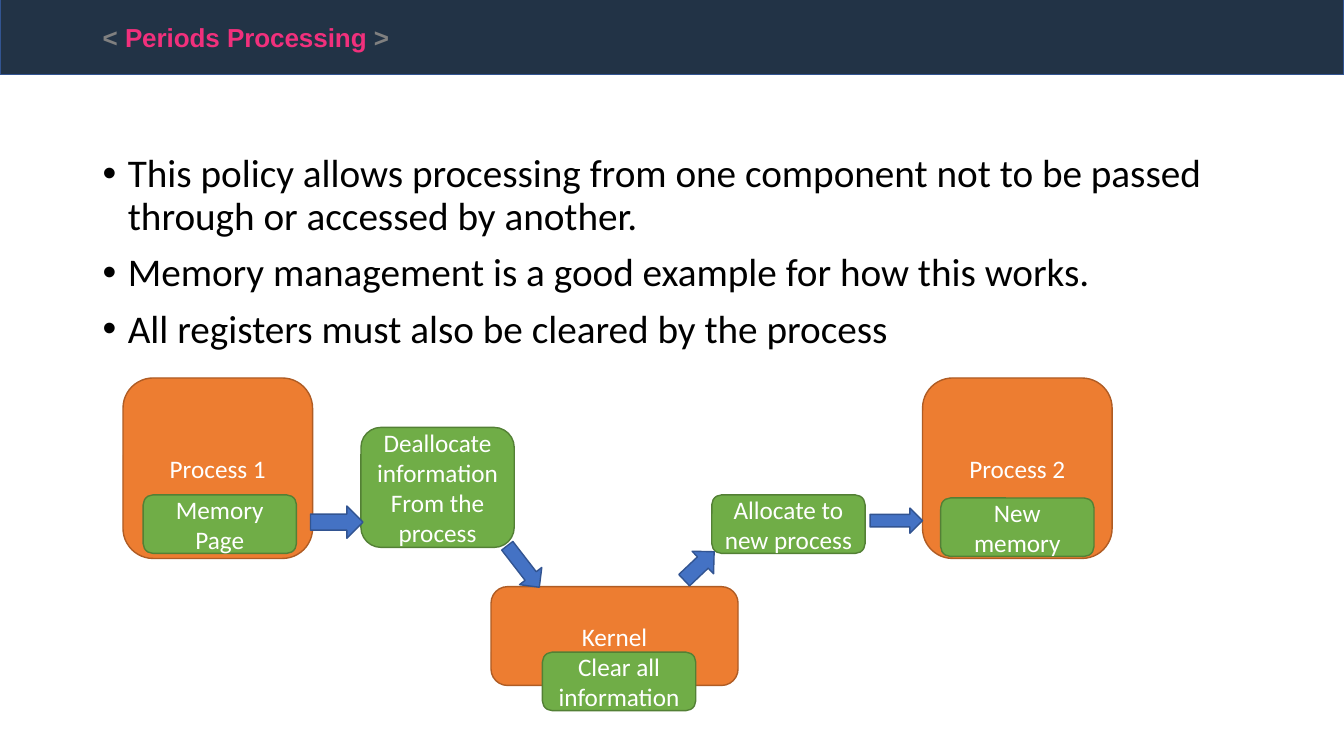
from dataclasses import dataclass

from lxml import etree
from pptx import Presentation
from pptx.dml.color import RGBColor
from pptx.enum.shapes import MSO_SHAPE as Preset
from pptx.enum.text import MSO_ANCHOR as Anchor, PP_ALIGN as Align
from pptx.oxml.ns import qn
from pptx.util import Inches, Pt

NAVY = RGBColor(0x22, 0x33, 0x46)
BLUE = RGBColor(0x44, 0x72, 0xC4)
BLUE_EDGE = RGBColor(0x32, 0x54, 0x91)
ORANGE = RGBColor(0xED, 0x7D, 0x31)
ORANGE_EDGE = RGBColor(0xAF, 0x5C, 0x24)
GREEN = RGBColor(0x70, 0xAD, 0x47)
GREEN_EDGE = RGBColor(0x53, 0x80, 0x35)
PINK = RGBColor(0xF1, 0x30, 0x7C)
GRAY = RGBColor(0x80, 0x80, 0x80)
WHITE = RGBColor(0xFF, 0xFF, 0xFF)
BLACK = RGBColor(0x00, 0x00, 0x00)

SLIDE_WIDTH, SLIDE_HEIGHT = 13.33, 7.5
STEP_WIDTH, STEP_HEIGHT = 1.52, 0.58
PROCESS_WIDTH, PROCESS_HEIGHT = 1.88, 1.79


@dataclass(frozen=True)
class Block:
    left: float
    top: float
    width: float
    height: float
    fill: RGBColor
    edge: RGBColor
    preset: Preset = Preset.ROUNDED_RECTANGLE
    label: str = ""
    rotation: float = 0


def process(label: str, left: float) -> Block:
    return Block(left, 3.75, PROCESS_WIDTH, PROCESS_HEIGHT, ORANGE, ORANGE_EDGE, label=label)


def step(label: str, left: float, top: float, height: float = STEP_HEIGHT) -> Block:
    return Block(left, top, STEP_WIDTH, height, GREEN, GREEN_EDGE, label=label)


def arrow(left: float, top: float, width: float, height: float, rotation: float = 0) -> Block:
    return Block(left, top, width, height, BLUE, BLUE_EDGE, Preset.RIGHT_ARROW, rotation=rotation)


HEADER_BAND = Block(0, -0.04, SLIDE_WIDTH, 0.78, NAVY, BLUE_EDGE, Preset.RECTANGLE)
DIAGRAM = [
    process("Process 1", 1.22),
    process("Process 2", 9.15),
    step("Memory Page", 1.42, 4.91),
    Block(4.87, 5.82, 2.45, 0.98, ORANGE, ORANGE_EDGE, label="Kernel"),
    step("Deallocate information From the process", 3.58, 4.24, 1.19),
    arrow(3.08, 5.02, 0.52, 0.32),
    arrow(4.93, 5.48, 0.52, 0.28, 52.3),
    step("Clear all information", 5.38, 6.47),
    step("Allocate to new process", 7.06, 4.91),
    step("New memory", 9.33, 4.94),
    arrow(8.63, 5.04, 0.52, 0.25),
    arrow(6.73, 5.46, 0.41, 0.31, 316.5),
]
TITLE = [("< ", GRAY), ("Periods Processing ", PINK), (">", GRAY)]
POINTS = [
    "This policy allows processing from one component not to be passed through or accessed by another.",
    "Memory management is a good example for how this works.",
    "All registers must also be cleared by the process",
]


def add_span(para, text: str, size: float, color: RGBColor, font: str = "Calibri"):
    span = para.add_run()
    span.text = text
    span.font.name = font
    span.font.size = Pt(size)
    span.font.color.rgb = color
    return span


def draw_block(page, block: Block) -> None:
    bounds = (block.left, block.top, block.width, block.height)
    shape = page.shapes.add_shape(block.preset, *map(Inches, bounds))
    shape.shadow.inherit = False
    shape.rotation = block.rotation
    shape.fill.solid()
    shape.fill.fore_color.rgb = block.fill
    shape.line.color.rgb = block.edge
    shape.line.width = Pt(1)
    if block.label:
        frame = shape.text_frame
        frame.word_wrap = True
        frame.vertical_anchor = Anchor.MIDDLE
        para = frame.paragraphs[0]
        para.alignment = Align.CENTER
        add_span(para, block.label, 18, WHITE)


def add_frame(page, left: float, top: float, width: float, height: float):
    box = page.shapes.add_textbox(*map(Inches, (left, top, width, height)))
    box.text_frame.word_wrap = True
    return box.text_frame


def add_bullet(para) -> None:
    properties = para._p.get_or_add_pPr()
    properties.set("marL", str(Inches(0.25)))
    properties.set("indent", str(Inches(-0.25)))
    etree.SubElement(properties, qn("a:buFont")).set("typeface", "Arial")
    etree.SubElement(properties, qn("a:buChar")).set("char", "•")


def draw_title(page) -> None:
    para = add_frame(page, 0.92, 0.11, 12.38, 0.64).paragraphs[0]
    for text, color in TITLE:
        span = add_span(para, text, 32, color, "Arial")
        span.font.bold = True
        span.font._element.set("baseline", "30000")


def draw_points(page) -> None:
    frame = add_frame(page, 0.92, 1.48, 11.5, 2.2)
    for index, text in enumerate(POINTS):
        para = frame.add_paragraph() if index else frame.paragraphs[0]
        add_bullet(para)
        para.line_spacing = 0.9
        para.space_before = Pt(10 if index else 0)
        add_span(para, text, 28, BLACK)


def main() -> None:
    deck = Presentation()
    deck.slide_width = Inches(SLIDE_WIDTH)
    deck.slide_height = Inches(SLIDE_HEIGHT)
    page = deck.slides.add_slide(deck.slide_layouts[6])
    draw_block(page, HEADER_BAND)
    draw_points(page)
    draw_title(page)
    for block in DIAGRAM:
        draw_block(page, block)
    deck.save("out.pptx")


if __name__ == "__main__":
    main()
